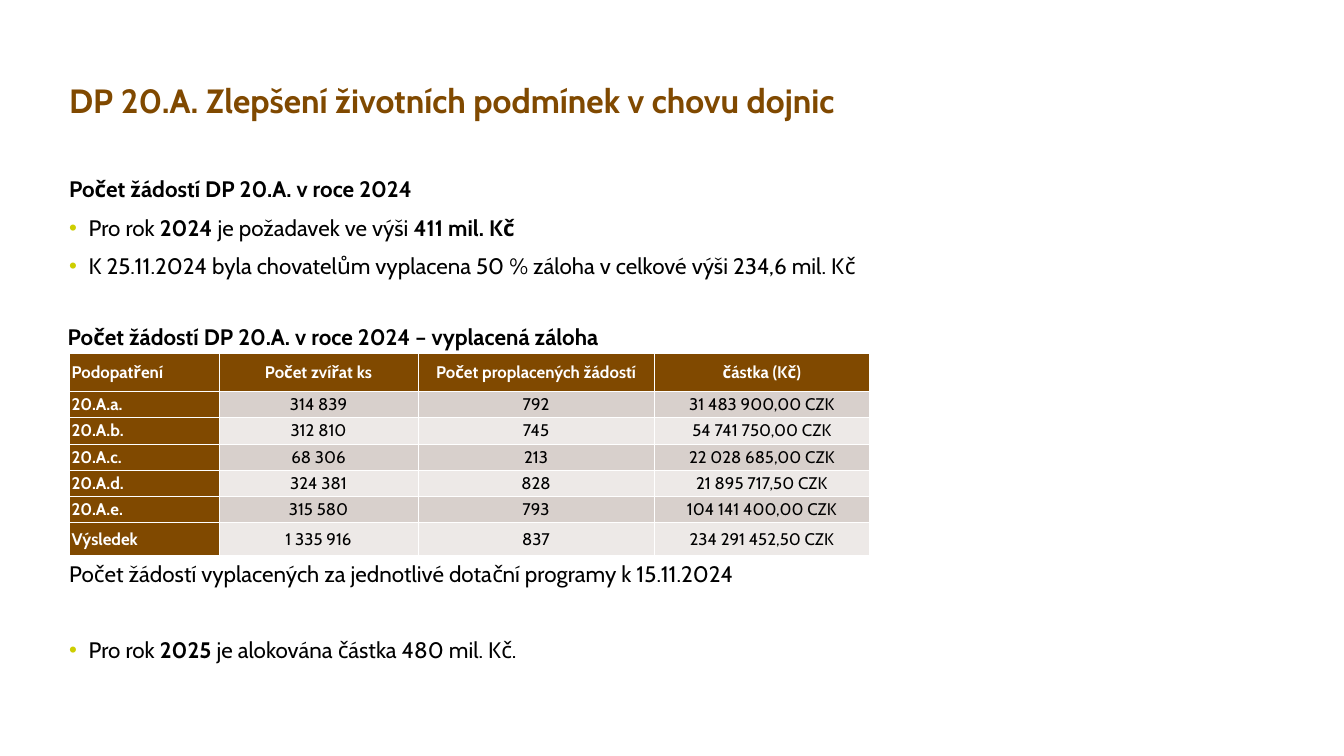
from lxml.etree import SubElement
from pptx import Presentation
from pptx.dml.color import RGBColor
from pptx.enum.text import MSO_ANCHOR as Anchor, MSO_AUTO_SIZE as AutoSize, PP_ALIGN as Align
from pptx.oxml.ns import qn
from pptx.util import Pt

COLORS = {
    "brown": "804900",
    "lime": "CDCE00",
    "black": "000000",
    "white": "FFFFFF",
    "band_dark": "D8D0CC",
    "band_light": "EDE9E7",
}
FONT = "Cabin"
TEXT_SIZE = 32
LINE_STEP = 55  # one body line together with the usual space before it
SPACE = 20
LEFT = 98.6

# Each entry: bulleted, space before, runs of (text, bold)
BODY = [
    (False, 0, [("Počet žádostí DP 20.A. v roce 2024", True)]),
    (True, SPACE, [("Pro rok ", False), ("2024", True),
                   (" je požadavek ve výši ", False), ("411 mil. Kč", True)]),
    (True, SPACE, [("K 25.11.2024 byla chovatelům vyplacena 50 % záloha "
                    "v celkové výši 234,6 mil. Kč", False)]),
    (False, SPACE + 7 * LINE_STEP,
     [("Počet žádostí vyplacených za jednotlivé dotační programy k 15.11.2024", False)]),
    (True, SPACE + LINE_STEP, [("Pro rok ", False), ("2025", True),
                               (" je alokována částka 480 mil. Kč.", False)]),
]

ROWS = [
    ["Podopatření", "Počet zvířat ks", "Počet proplacených žádostí", "částka (Kč)"],
    ["20.A.a.", "314 839", "792", "31 483 900,00 CZK"],
    ["20.A.b.", "312 810", "745", "54 741 750,00 CZK"],
    ["20.A.c.", "68 306", "213", "22 028 685,00 CZK"],
    ["20.A.d.", "324 381", "828", "21 895 717,50 CZK"],
    ["20.A.e.", "315 580", "793", "104 141 400,00 CZK"],
    ["Výsledek", "1 335 916", "837", "234 291 452,50 CZK"],
]
COLUMN_WIDTHS = [214.6, 283.7, 337.7, 307.4]
ROW_HEIGHTS = [55.4] + [37.4] * 5 + [47.5]


class SlideBuilder:
    """Holds the style and the slide being filled."""

    def __init__(self, slide):
        self.slide = slide

    def add_run(self, paragraph, text, size=TEXT_SIZE, color="black", bold=False):
        run = paragraph.add_run()
        run.text = text
        run.font.name = FONT
        run.font.size = Pt(size)
        run.font.bold = bold
        run.font.color.rgb = RGBColor.from_string(COLORS[color])

    def place(self, shape, left, top, width, height):
        shape.left, shape.top = Pt(left), Pt(top)
        shape.width, shape.height = Pt(width), Pt(height)

    def prepare_frame(self, frame):
        """Top-anchored text without insets or shrinking."""
        frame.margin_left = frame.margin_top = frame.margin_right = frame.margin_bottom = 0
        frame.vertical_anchor = Anchor.TOP
        frame.word_wrap = True
        frame.auto_size = AutoSize.NONE

    def set_bullet(self, paragraph, bulleted):
        properties = paragraph._p.get_or_add_pPr()
        indent = Pt(28) if bulleted else 0
        properties.set("marL", str(indent))
        properties.set("indent", str(-indent))
        if bulleted:
            color = SubElement(properties, qn("a:buClr"))
            SubElement(color, qn("a:srgbClr"), val=COLORS["lime"])
            SubElement(properties, qn("a:buChar"), char="•")
        else:
            SubElement(properties, qn("a:buNone"))

    def title(self, text, *box):
        shape = self.slide.shapes.title
        self.place(shape, *box)
        self.prepare_frame(shape.text_frame)
        paragraph = shape.text_frame.paragraphs[0]
        paragraph.alignment = Align.LEFT
        paragraph.line_spacing = 0.9
        self.add_run(paragraph, text, 48, "brown", True)

    def body(self, entries, *box):
        shape = self.slide.placeholders[1]
        self.place(shape, *box)
        frame = shape.text_frame
        self.prepare_frame(frame)
        for index, (bulleted, space_before, runs) in enumerate(entries):
            paragraph = frame.add_paragraph() if index else frame.paragraphs[0]
            self.set_bullet(paragraph, bulleted)
            paragraph.line_spacing = 0.9
            paragraph.space_before = Pt(space_before)
            for text, bold in runs:
                self.add_run(paragraph, text, bold=bold)

    def caption(self, text, *box):
        frame = self.slide.shapes.add_textbox(*map(Pt, box)).text_frame
        frame.word_wrap = True
        frame.vertical_anchor = Anchor.MIDDLE
        frame.auto_size = AutoSize.SHAPE_TO_FIT_TEXT
        self.add_run(frame.paragraphs[0], text, bold=True)

    def set_borders(self, cell, widths):
        properties = cell._tc.get_or_add_tcPr()
        for position, (side, width) in enumerate(widths.items()):
            line = SubElement(properties, qn(f"a:ln{side}"), w=str(Pt(width)))
            fill = SubElement(line, qn("a:solidFill"))
            SubElement(fill, qn("a:srgbClr"), val=COLORS["white"])
            properties.insert(position, line)

    def table(self, rows, column_widths, row_heights, left, top):
        table = self.slide.shapes.add_table(
            len(rows), len(column_widths), Pt(left), Pt(top),
            Pt(sum(column_widths)), Pt(sum(row_heights))).table
        table.first_col = True
        for column, width in zip(table.columns, column_widths):
            column.width = Pt(width)
        for row, height in zip(table.rows, row_heights):
            row.height = Pt(height)
        for r, texts in enumerate(rows):
            for c, text in enumerate(texts):
                self.fill_cell(table.cell(r, c), text, r, c)

    def fill_cell(self, cell, text, row, column):
        heading = row == 0 or column == 0
        band = "band_dark" if row % 2 else "band_light"
        cell.fill.solid()
        cell.fill.fore_color.rgb = RGBColor.from_string(COLORS["brown" if heading else band])
        cell.margin_left = cell.margin_right = Pt(3.6)
        cell.margin_top = cell.margin_bottom = 0
        cell.vertical_anchor = Anchor.MIDDLE
        self.set_borders(cell, {"L": 1, "R": 1, "T": 3 if row == 1 else 1,
                                "B": 3 if row == 0 else 1})
        paragraph = cell.text_frame.paragraphs[0]
        paragraph.alignment = Align.CENTER if column else Align.LEFT
        self.add_run(paragraph, text, 24, "white" if heading else "black", heading)


def main():
    presentation = Presentation()
    presentation.slide_width, presentation.slide_height = Pt(1920), Pt(1080)
    slide = presentation.slides.add_slide(presentation.slide_layouts[1])
    builder = SlideBuilder(slide)
    builder.title("DP 20.A. Zlepšení životních podmínek v chovu dojnic", LEFT, 120, 1724, 96.5)
    builder.body(BODY, LEFT, 255, 1724, 726.5)
    builder.table(ROWS, COLUMN_WIDTHS, ROW_HEIGHTS, LEFT, 504)
    builder.caption("Počet žádostí DP 20.A. v roce 2024 – vyplacená záloha", 89.5, 458, 946, 46)
    presentation.save("out.pptx")


if __name__ == "__main__":
    main()
